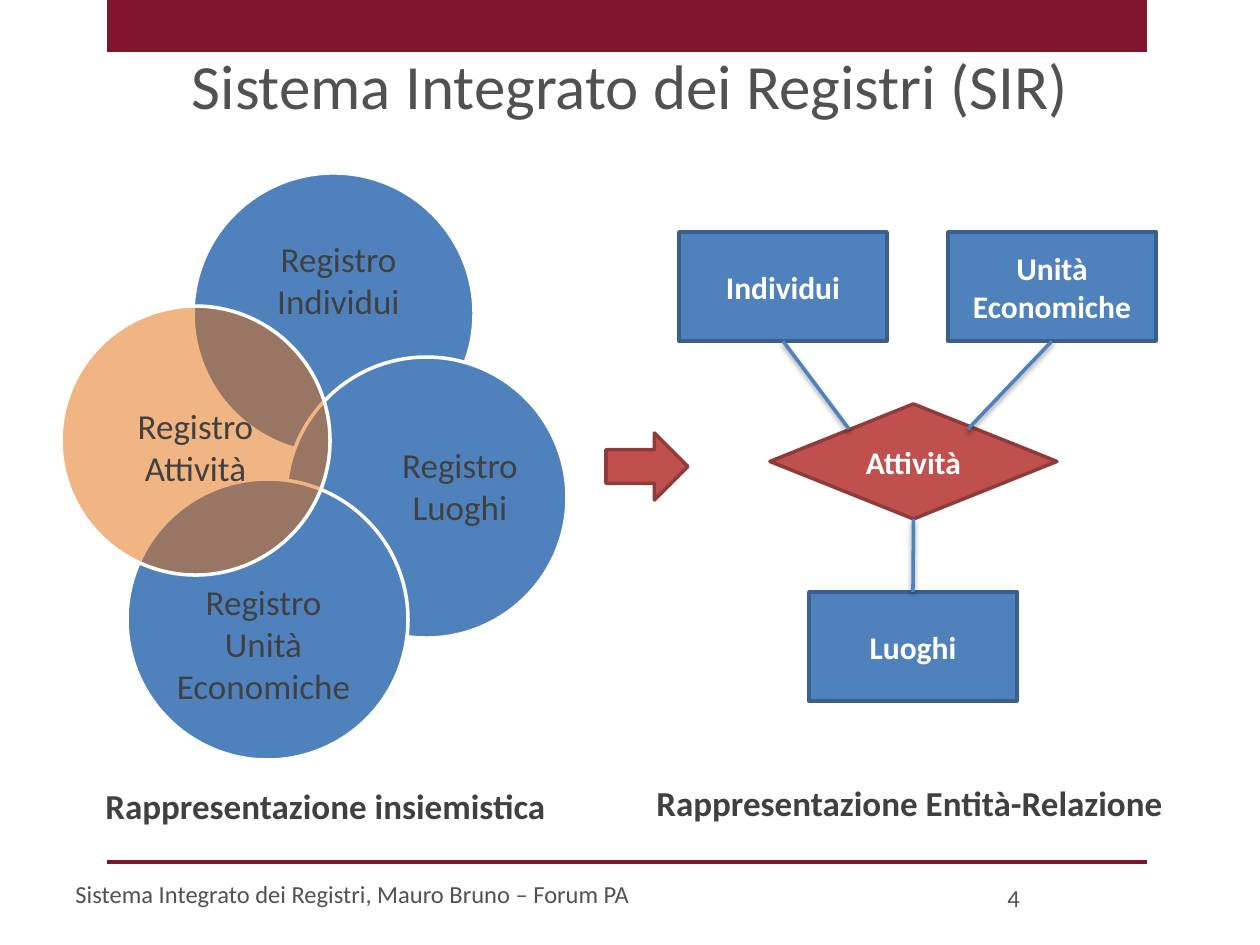
from lxml import etree
from pptx import Presentation
from pptx import util as u
from pptx.dml.color import RGBColor
from pptx.enum import shapes as sh, text as tx
from pptx.oxml import parse_xml
from pptx.oxml.ns import qn, nsdecls

SCALE = 914400 / 126
BLUE, RED, WINE = "4F81BD", "C0504D", "7F142A"
GREY, DARK, WHITE = "505150", "404040", "FFFFFF"
KIND = sh.MSO_SHAPE

deck = Presentation()
deck.slide_width, deck.slide_height = u.Inches(10), u.Inches(7.5)
slide = deck.slides.add_slide(deck.slide_layouts[6])
tree = slide.shapes


def px(*nums):
    """Turn px lengths into EMU."""
    return [u.Emu(round(n * SCALE)) for n in nums]


def hue(code):
    return RGBColor.from_string(code)


def write(shape, words, size, color, bold=False, mid=False, wrap=True):
    frame = shape.text_frame
    frame.word_wrap = wrap
    para = frame.paragraphs[0]
    para.text = words
    para.alignment = tx.PP_ALIGN.CENTER if mid else tx.PP_ALIGN.LEFT
    font = para.font
    font.name, font.size, font.bold = "Calibri", u.Pt(size), bold
    font.color.rgb = hue(color)


def draw(kind, box, fill, edge=None):
    shape = tree.add_shape(kind, *px(*box))
    shape.shadow.inherit = False
    shape.fill.solid()
    shape.fill.fore_color.rgb = hue(fill)
    if edge:
        shape.line.color.rgb = hue(edge)
        shape.line.width = u.Pt(2)
    else:
        shape.line.fill.background()
    return shape


# Frame of the page
draw(KIND.RECTANGLE, (107, 0, 1040, 52), WINE)
rule = tree.add_connector(sh.MSO_CONNECTOR.STRAIGHT, *px(107, 862, 1147, 862))
rule.line.color.rgb = hue(WINE)
rule.line.width = u.Pt(2)
etree.SubElement(rule._element.spPr, qn("a:effectLst"))

# Title, footer and captions: box, words, size, colour, bold, centred, wrap
for box, *style in [
    ((63, 40, 1134, 158), "Sistema Integrato dei Registri (SIR)", 36, GREY, False, True),
    ((63, 873, 814, 50), "Sistema Integrato dei Registri, Mauro Bruno – Forum PA", 14, GREY),
    ((995, 877, 90, 50), "4", 14, GREY),
    ((93, 778, 470, 55), "Rappresentazione insiemistica", 20, DARK, True, False, False),
    ((644, 775, 535, 55), "Rappresentazione Entità-Relazione", 20, DARK, True, False, False),
]:
    write(tree.add_textbox(*px(*box)), *style)

# Overlapping sets, the clear one on top
for disc, box, name, fill in [
    ((193, 173, 281, 281), (234, 231, 209, 97), "Individui", BLUE),
    ((286, 357, 281, 281), (364, 437, 192, 97), "Luoghi", BLUE),
    ((127, 479, 281, 281), (159, 574, 209, 140), "Unità Economiche", BLUE),
    ((61, 306, 269, 269), (91, 398, 209, 97), "Attività", "E46C0A"),
]:
    oval = draw(KIND.OVAL, disc, fill, WHITE)
    write(tree.add_textbox(*px(*box)), "Registro " + name, 20, DARK, mid=True)
tint = oval._element.spPr.find(qn("a:solidFill"))[0]
etree.SubElement(tint, qn("a:alpha"), val="50000")

# Entities and their relation
nodes = {}
for name, kind, box, fill, edge in [
    ("Individui", KIND.RECTANGLE, (679, 232, 208, 109), BLUE, "3A5F8C"),
    ("Unità Economiche", KIND.RECTANGLE, (948, 232, 208, 109), BLUE, "3A5F8C"),
    ("Attività", KIND.FLOWCHART_DECISION, (770, 404, 287, 115), RED, "8E3B39"),
    ("Luoghi", KIND.RECTANGLE, (809, 592, 208, 109), BLUE, "3A5F8C"),
]:
    node = nodes[name] = draw(kind, box, fill, edge)
    node.text_frame.vertical_anchor = tx.MSO_ANCHOR.MIDDLE
    write(node, name, 18, WHITE, bold=True, mid=True)

for name, end in [
    ("Unità Economiche", (968, 429)),
    ("Individui", (849, 429)),
    ("Attività", (913, 592)),
]:
    link = tree.add_connector(sh.MSO_CONNECTOR.STRAIGHT, *px(0, 0, *end))
    link.begin_connect(nodes[name], 2)
    if name == "Attività":
        link.end_connect(nodes["Luoghi"], 0)
    link.line.color.rgb = hue(BLUE)
    link.line.width = u.Pt(2)
    link._element.spPr.append(parse_xml(
        f'<a:effectLst {nsdecls("a")}>'
        '<a:outerShdw blurRad="40000" dist="20000" dir="5400000" rotWithShape="0">'
        '<a:srgbClr val="000000"><a:alpha val="38000"/></a:srgbClr>'
        '</a:outerShdw></a:effectLst>'))

draw(KIND.RIGHT_ARROW, (606, 433, 82, 67), RED, "8E3B39")

deck.save("out.pptx")
